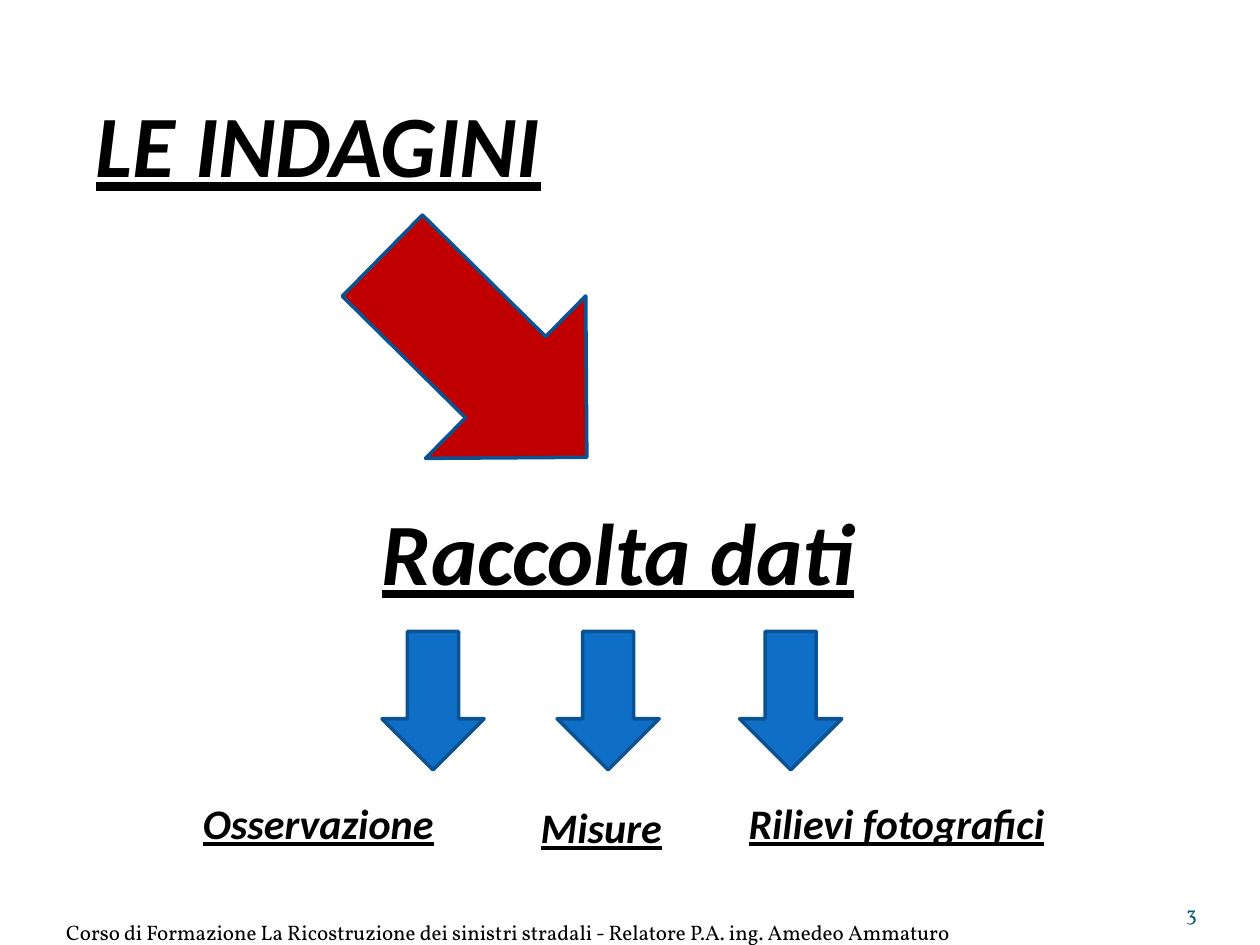
"""Build the slide on investigations and data collection."""
from pptx import Presentation
from pptx.dml.color import RGBColor
from pptx.enum.shapes import MSO_SHAPE as Shape
from pptx.enum.text import MSO_ANCHOR as Anchor, PP_ALIGN as Align
from pptx.util import Cm, Pt


def color(value):
    return RGBColor.from_string(value)


def add_text(text, box, size, alignment=Align.LEFT, name="Calibri", fill="000000", emphasis=True):
    text_box = slide.shapes.add_textbox(*map(Cm, box))
    frame = text_box.text_frame
    frame_format = {
        "word_wrap": True,
        "vertical_anchor": Anchor.BOTTOM,
        "margin_left": 0,
        "margin_top": Cm(0.13) if emphasis else 0,
        "margin_right": 0,
        "margin_bottom": 0,
    }
    for key, value in frame_format.items():
        setattr(frame, key, value)
    paragraph = frame.paragraphs[0]
    paragraph.text = text
    paragraph.alignment = alignment
    font = paragraph.runs[0].font
    font_format = {
        "name": name,
        "size": Pt(size),
        "bold": emphasis,
        "italic": emphasis,
        "underline": emphasis,
    }
    for key, value in font_format.items():
        setattr(font, key, value)
    font.color.rgb = color(fill)


presentation = Presentation()
presentation.slide_width = Cm(25.4)
presentation.slide_height = Cm(19.05)
slide = presentation.slides.add_slide(presentation.slide_layouts[6])

add_text("3", (22.02, 17.65, 2.11, 1.02), 12, Align.RIGHT, "Vollkorn", "045D75", False)
add_text(
    "Corso di Formazione La Ricostruzione dei sinistri stradali - Relatore P.A. ing. Amedeo Ammaturo",
    (0, 18.03, 20.5, 1.02), 12, Align.CENTER, "Vollkorn", emphasis=False,
)

headings = [
    ("LE INDAGINI", (1.93, 0.76, 22.86, 3.18)),
    ("Raccolta dati", (7.7, 9.58, 12.19, 2.57)),
]
for text, box in headings:
    add_text(text, box, 50)

arrows = [((7.47, 4.29, 4.6, 5.79), 314.6, "C00000")]
arrows += [((left, 12.73, 2.06, 2.79), 0, "0F6FC6") for left in (7.7, 11.23, 14.91)]
for box, rotation, fill in arrows:
    arrow = slide.shapes.add_shape(Shape.DOWN_ARROW, *map(Cm, box))
    arrow.rotation = rotation
    arrow.shadow.inherit = False
    arrow.fill.solid()
    arrow.fill.fore_color.rgb = color(fill)
    arrow.line.color.rgb = color("0B5292")
    arrow.line.width = Pt(2)

activities = [
    ("Osservazione", 4.09, 15.52),
    ("Misure", 10.9, 15.6),
    ("Rilievi fotografici", 15.09, 15.52),
]
for text, left, top in activities:
    add_text(text, (left, top, 6.81, 1.57), 24)

presentation.save("out.pptx")
